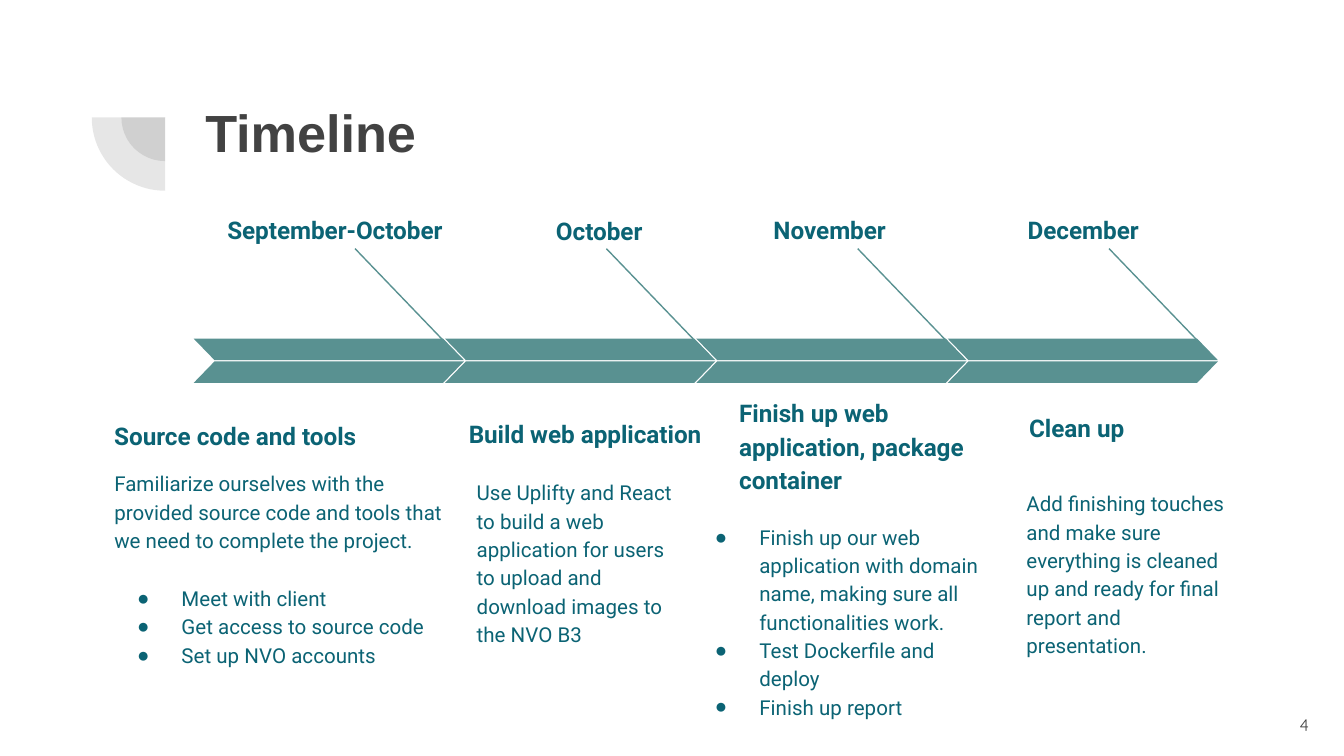
from lxml import etree
from pptx import Presentation
from pptx.dml.color import RGBColor
from pptx.enum.shapes import MSO_CONNECTOR, MSO_SHAPE
from pptx.enum.text import MSO_ANCHOR, MSO_AUTO_SIZE, PP_ALIGN
from pptx.oxml.ns import qn
from pptx.util import Cm, Pt

PIE, PARALLELOGRAM = MSO_SHAPE.PIE, MSO_SHAPE.PARALLELOGRAM
STRAIGHT = MSO_CONNECTOR.STRAIGHT
TOP, MIDDLE, BOTTOM = MSO_ANCHOR.TOP, MSO_ANCHOR.MIDDLE, MSO_ANCHOR.BOTTOM
LEFT, RIGHT = PP_ALIGN.LEFT, PP_ALIGN.RIGHT
NO_FIT = MSO_AUTO_SIZE.NONE
TWO_CONTENT_LAYOUT = 3

COLORS = {"dark": "424242", "text": "0B6374", "bar": "599191"}

BAR_LEFT, BAR_STEP = 3.66, 4.75

# Boxes are left, top, width, height in cm; list items follow the body text.
PHASES = [
    {"month": "September-October", "month_box": (3.81, 3.73, 4.8, 0.66),
     "heading": "Source code and tools", "heading_box": (1.91, 7.52, 5.72, 1.24),
     "body": "Familiarize ourselves with the provided source code and tools "
             "that we need to complete the project.",
     "items": ["Meet with client", "Get access to source code", "Set up NVO accounts"],
     "body_box": (1.91, 8.59, 6.99, 4.65)},
    {"month": "October", "month_box": (10.08, 3.76, 2.31, 0.66),
     "heading": "Build web application", "heading_box": (8.61, 7.49, 5.11, 1.24),
     "body": "Use Uplifty and React to build a web application for users to "
             "upload and download images to the NVO B3",
     "items": [], "body_box": (8.76, 8.76, 4.29, 2.06)},
    {"month": "November", "month_box": (13.94, 3.73, 3.05, 0.66),
     "heading": "Finish up web application, package container",
     "heading_box": (13.72, 8.05, 5.11, 1.55),
     "body": "",
     "items": ["Finish up our web application with domain name, making sure all "
               "functionalities work.", "Test Dockerfile and deploy", "Finish up report"],
     "body_box": (12.83, 9.6, 5.97, 3.91)},
    {"month": "December", "month_box": (19.15, 3.73, 2.62, 0.66),
     "heading": "Clean up", "heading_box": (19.2, 7.37, 4.19, 1.24),
     "body": "Add finishing touches and make sure everything is cleaned up and "
             "ready for final report and presentation.",
     "items": [], "body_box": (19.15, 8.97, 4.29, 2.06)},
]


class SlideBuilder:
    def __init__(self, slide, font="Roboto"):
        self.slide = slide
        self.font = font

    def color(self, name):
        return RGBColor.from_string(COLORS[name])

    def place(self, shape, box, anchor=TOP):
        """Position a text shape and give its frame the common settings."""
        shape.left, shape.top, shape.width, shape.height = map(Cm, box)
        frame = shape.text_frame
        frame.word_wrap = True
        frame.auto_size = NO_FIT
        frame.vertical_anchor = anchor
        frame.margin_left = frame.margin_right = Cm(0.25)
        frame.margin_top = frame.margin_bottom = Cm(0.25)
        return frame

    def style(self, paragraph, size, color="text", bold=False, font=None,
              align=LEFT, spacing=1.15, before=0):
        paragraph.alignment = align
        paragraph.line_spacing = spacing
        paragraph.space_before = Pt(before)
        paragraph.font.name = font or self.font
        paragraph.font.size = Pt(size)
        paragraph.font.bold = bold
        paragraph.font.color.rgb = self.color(color)

    def bullet(self, paragraph, character):
        """Set the bullet and hanging indent; no character means plain text."""
        properties = paragraph._p.get_or_add_pPr()
        properties.set("marL", str(Cm(1.27) if character else 0))
        properties.set("indent", str(Cm(-0.84) if character else 0))
        if character:
            etree.SubElement(properties, qn("a:buChar")).set("char", character)
        else:
            etree.SubElement(properties, qn("a:buNone"))

    def title(self, text, box):
        frame = self.place(self.slide.shapes.title, box)
        frame.text = text
        self.style(frame.paragraphs[0], 28, "dark", True, "Arial", spacing=1)

    def text(self, text, box, size, anchor=TOP, **style):
        frame = self.place(self.slide.shapes.add_textbox(0, 0, 0, 0), box, anchor)
        frame.text = text
        self.style(frame.paragraphs[0], size, **style)

    def body_list(self, placeholder, intro, items, box):
        frame = self.place(placeholder, box)
        lines = ([(intro, "")] if intro else []) + [(item, "●") for item in items]
        frame.text = "\n".join(line for line, _ in lines)
        for index, (paragraph, (_, character)) in enumerate(zip(frame.paragraphs, lines)):
            self.bullet(paragraph, character)
            self.style(paragraph, 11, before=16 if intro and index == 1 else 0)

    def shape(self, kind, box, color, adjustments, alpha=None, rotation=0, flip=False):
        shape = self.slide.shapes.add_shape(kind, *map(Cm, box))
        shape.shadow.inherit = False
        shape.rotation = rotation
        for index, value in enumerate(adjustments):
            shape.adjustments[index] = value
        shape.fill.solid()
        shape.fill.fore_color.rgb = self.color(color)
        shape.line.fill.background()
        properties = shape._element.spPr
        if alpha is not None:
            fill_color = properties.find(qn("a:solidFill")).find(qn("a:srgbClr"))
            etree.SubElement(fill_color, qn("a:alpha")).set("val", str(alpha * 1000))
        if flip:
            properties.find(qn("a:xfrm")).set("flipH", "1")

    def line(self, start, end):
        connector = self.slide.shapes.add_connector(STRAIGHT, *map(Cm, start + end))
        connector.line.color.rgb = self.color("bar")
        connector.line.width = Pt(0.75)
        etree.SubElement(connector._element.spPr, qn("a:effectLst"))


def main():
    presentation = Presentation()
    presentation.slide_width, presentation.slide_height = Cm(25.4), Cm(14.29)
    slide = presentation.slides.add_slide(presentation.slide_layouts[TWO_CONTENT_LAYOUT])
    builder = SlideBuilder(slide)
    list_placeholders = iter([slide.placeholders[1], slide.placeholders[2]])

    for diameter in (1.65, 2.77):
        corner = (3.12 - diameter / 2, 2.22 - diameter / 2)
        builder.shape(PIE, corner + (diameter, diameter), "dark", (108, 162),
                      alpha=13, rotation=270)
    builder.title("Timeline", (3.63, 1.65, 19.53, 2.77))

    for index, phase in enumerate(PHASES):
        left = BAR_LEFT + index * BAR_STEP
        builder.line((left + 3.05, 4.7), (left + 5.04, 6.77))
        for top, flip in ((6.4, True), (6.83, False)):
            builder.shape(PARALLELOGRAM, (left, top, 5.11, 0.41), "bar", (0.97,), flip=flip)
        builder.text(phase["month"], phase["month_box"], 13, bold=True, align=RIGHT)
        builder.text(phase["heading"], phase["heading_box"], 13, BOTTOM, bold=True)
        if phase["items"]:
            builder.body_list(next(list_placeholders), phase["body"], phase["items"],
                              phase["body_box"])
        else:
            builder.text(phase["body"], phase["body_box"], 11)

    builder.text("4", (23.47, 13.16, 1.52, 1.09), 9, MIDDLE, color="dark",
                 font="Quicksand", align=RIGHT, spacing=1)
    presentation.save("out.pptx")


if __name__ == "__main__":
    main()
